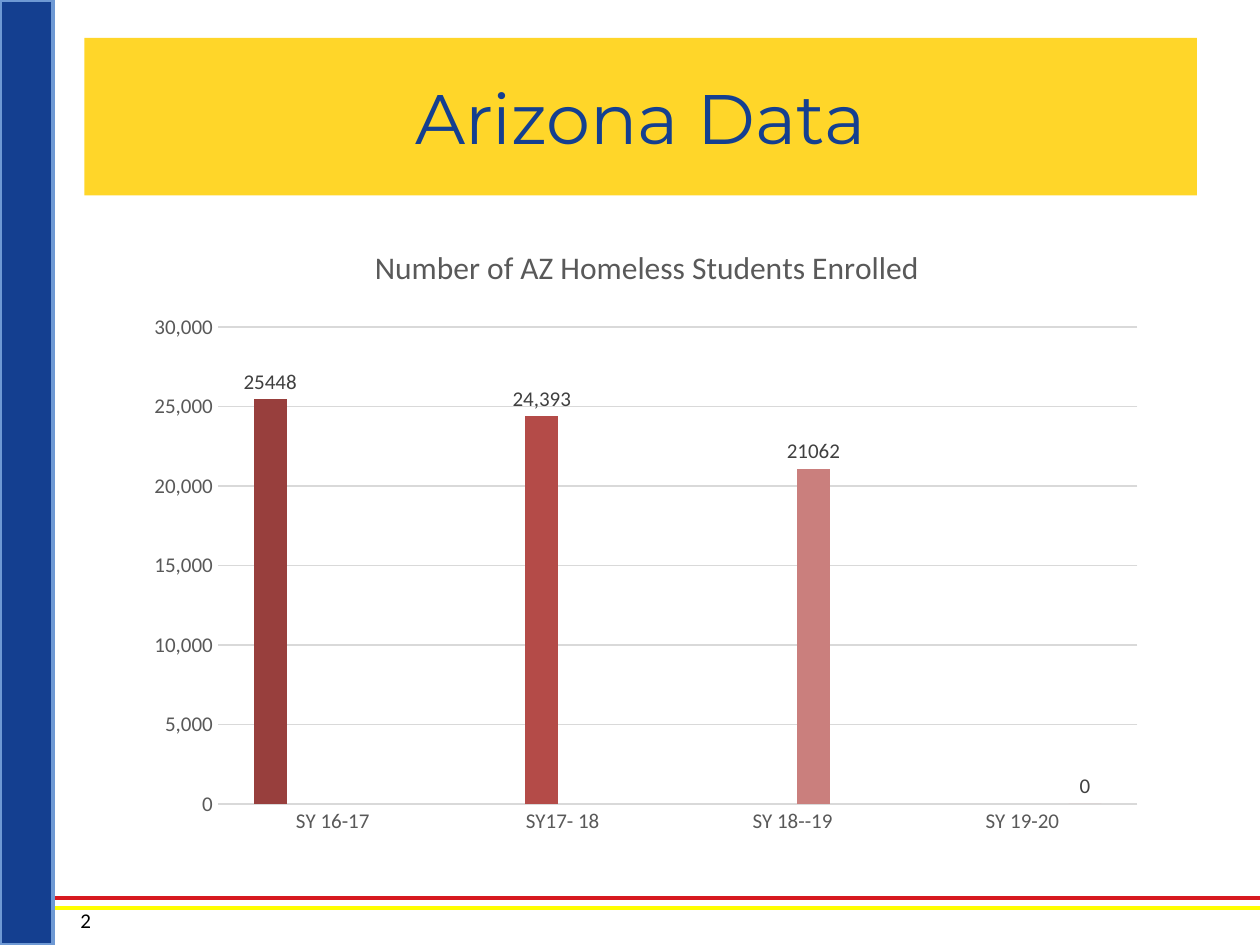
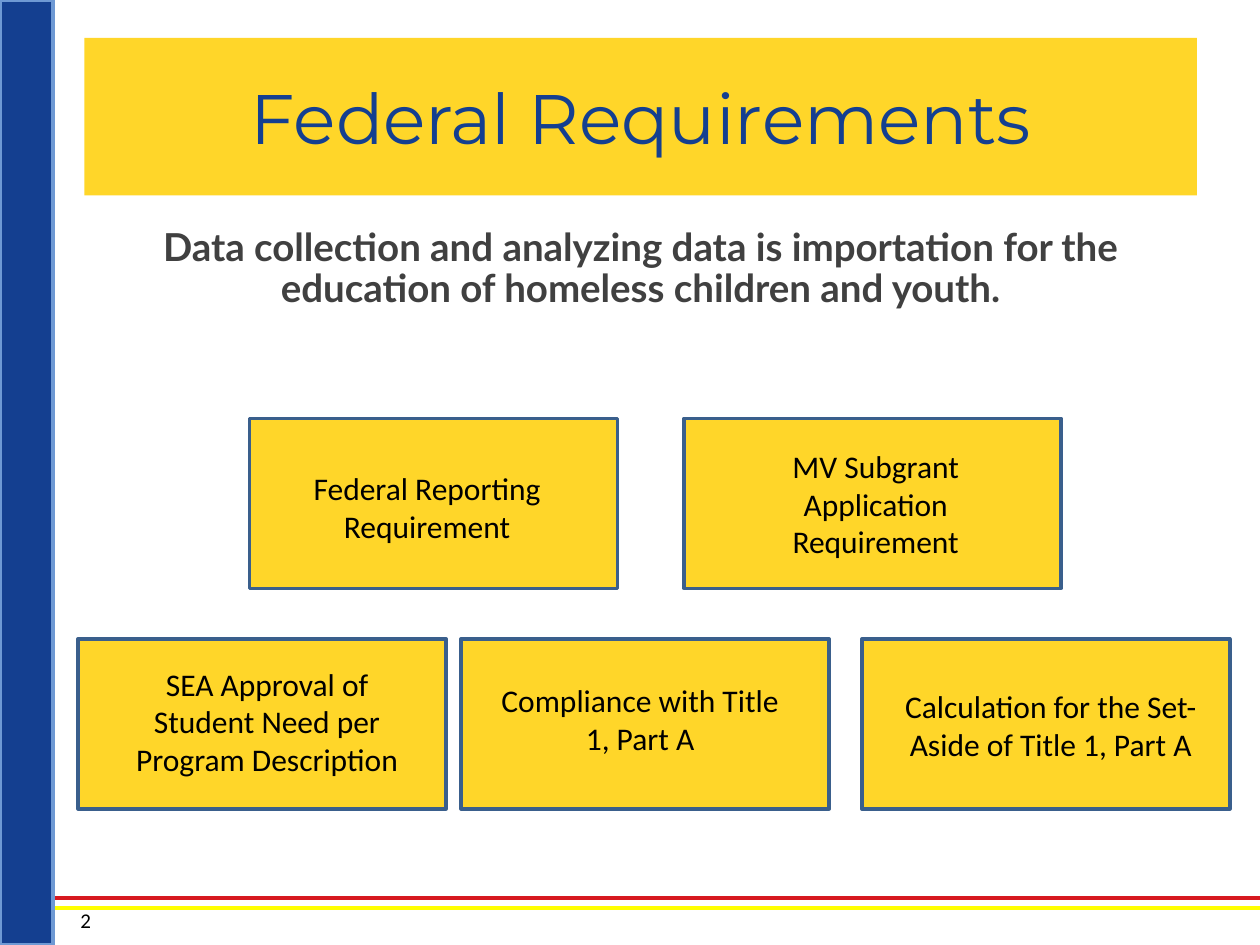
from lxml import etree
from pptx import Presentation
from pptx.chart.data import CategoryChartData
from pptx.dml.color import RGBColor
from pptx.enum.chart import XL_CHART_TYPE, XL_LABEL_POSITION, XL_TICK_MARK
from pptx.enum.shapes import MSO_CONNECTOR, MSO_SHAPE
from pptx.enum.text import MSO_ANCHOR, MSO_AUTO_SIZE, PP_ALIGN
from pptx.oxml import parse_xml
from pptx.oxml.ns import nsdecls, qn
from pptx.util import Inches, Pt

BLUE = RGBColor(0x14, 0x3F, 0x90)
BAND_EDGE = RGBColor(0x6E, 0x99, 0xD4)
BOX_EDGE = RGBColor(0x3A, 0x5F, 0x8C)
GOLD = RGBColor(0xFF, 0xD6, 0x29)
RED = RGBColor(0xD7, 0x19, 0x20)
YELLOW = RGBColor(0xFF, 0xFF, 0x00)
BLACK = RGBColor(0x00, 0x00, 0x00)
DARK = RGBColor(0x40, 0x40, 0x40)
GREY = RGBColor(0x59, 0x59, 0x59)
GRID = RGBColor(0xD9, 0xD9, 0xD9)

LEFT, CONTENT_W = Inches(0.67), Inches(8.83)

prs = Presentation()
prs.slide_width, prs.slide_height = Inches(10), Inches(7.5)


def add_rect(slide, x, y, w, h, fill, edge):
    sp = slide.shapes.add_shape(MSO_SHAPE.RECTANGLE, Inches(x), Inches(y), Inches(w), Inches(h))
    sp.shadow.inherit = False
    sp.fill.solid()
    sp.fill.fore_color.rgb = fill
    sp.line.color.rgb = edge
    sp.line.width = Pt(2)


def add_text(slide, x, y, w, h, text, size, align, anchor):
    tf = slide.shapes.add_textbox(Inches(x), Inches(y), Inches(w), Inches(h)).text_frame
    tf.word_wrap = True
    tf.auto_size = MSO_AUTO_SIZE.SHAPE_TO_FIT_TEXT
    tf.vertical_anchor = anchor
    tf.text = text
    p = tf.paragraphs[0]
    p.alignment = align
    font = p.runs[0].font
    font.size, font.name, font.color.rgb = Pt(size), "Calibri", BLACK


# Shared frame: footer rules, side band, title bar, page number
slides = []
for title, layout in (("Arizona Data", 5), ("Federal Requirements", 1)):
    slide = prs.slides.add_slide(prs.slide_layouts[layout])
    for x, y, color in ((0, 7.13, RED), (0.01, 7.21, YELLOW)):
        rule = slide.shapes.add_connector(
            MSO_CONNECTOR.STRAIGHT, Inches(x), Inches(y), Inches(x + 10), Inches(y))
        rule.line.color.rgb = color
        rule.line.width = Pt(2.25)
        etree.SubElement(rule._element.spPr, qn("a:effectLst"))
    add_rect(slide, 0, 0, 0.42, 7.5, BLUE, BAND_EDGE)

    sp = slide.shapes.title
    sp.left, sp.top, sp.width, sp.height = LEFT, Inches(0.3), CONTENT_W, Inches(1.25)
    sp.fill.solid()
    sp.fill.fore_color.rgb = GOLD
    tf = sp.text_frame
    tf.text = title
    tf.vertical_anchor = MSO_ANCHOR.MIDDLE
    p = tf.paragraphs[0]
    p.alignment = PP_ALIGN.CENTER
    font = p.runs[0].font
    font.size, font.name, font.color.rgb = Pt(40), "Montserrat", BLUE

    add_text(slide, 0.54, 7.15, 0.27, 0.3, "2", 12, PP_ALIGN.LEFT, MSO_ANCHOR.TOP)
    slides.append(slide)
data_slide, req_slide = slides

# Slide 1: enrolment chart, one series per school year
enrolment = [
    ("SY 16-17", 25448, RGBColor(0x98, 0x3F, 0x3D), "General"),
    ("SY17- 18", 24393, RGBColor(0xB4, 0x4B, 0x48), "#,##0"),
    ("SY 18--19", 21062, RGBColor(0xCA, 0x7F, 0x7D), "General"),
    ("SY 19-20", 0, RGBColor(0xDD, 0xB6, 0xB5), "General"),
]
data = CategoryChartData()
data.categories = [year for year, *_ in enrolment]
for i, (_, count, _, fmt) in enumerate(enrolment):
    values = [count if j == i else None for j in range(len(enrolment))]
    data.add_series(f"Series {i + 1}", values, number_format=fmt)
chart = data_slide.shapes.add_chart(
    XL_CHART_TYPE.COLUMN_CLUSTERED, Inches(1.08), Inches(1.75),
    Inches(8.11), Inches(4.98), data).chart
chart.has_legend = False
chart.font.size, chart.font.name = Pt(10), "Calibri"

chart.has_title = True
tf = chart.chart_title.text_frame
tf.text = "Number of AZ Homeless Students Enrolled"
font = tf.paragraphs[0].runs[0].font
font.size, font.name, font.bold, font.color.rgb = Pt(18), "Calibri", False, GREY
chart.chart_title.include_in_layout = False

plot = chart.plots[0]
plot.gap_width, plot.overlap, plot.vary_by_categories = 219, -27, False
for series, (_, _, color, fmt) in zip(plot.series, enrolment):
    series.format.fill.solid()
    series.format.fill.fore_color.rgb = color
    labels = series.data_labels
    labels.show_value = True
    labels.position = XL_LABEL_POSITION.OUTSIDE_END
    labels.number_format, labels.number_format_is_linked = fmt, False
    font = labels.font
    font.size, font.name, font.color.rgb = Pt(12), "Calibri", DARK

cat_axis, val_axis = chart.category_axis, chart.value_axis
for axis in (cat_axis, val_axis):
    axis.major_tick_mark = axis.minor_tick_mark = XL_TICK_MARK.NONE
    font = axis.tick_labels.font
    font.size, font.name, font.color.rgb = Pt(12), "Calibri", GREY
val_axis.minimum_scale, val_axis.maximum_scale, val_axis.major_unit = 0, 30000, 5000
val_axis.tick_labels.number_format = "#,##0"
val_axis.tick_labels.number_format_is_linked = False
val_axis.format.line.fill.background()
for line in (cat_axis.format.line, val_axis.major_gridlines.format.line):
    line.color.rgb = GRID
    line.width = Pt(0.75)

# Fixed place of the plot area, as shares of the chart
plot_area = chart._chartSpace.chart.plotArea
for old in plot_area.findall(qn("c:layout")):
    plot_area.remove(old)
plot_area.insert(0, parse_xml(
    f'<c:layout {nsdecls("c")}><c:manualLayout><c:layoutTarget val="inner"/>'
    '<c:xMode val="edge"/><c:yMode val="edge"/><c:x val="0.08"/><c:y val="0.17"/>'
    '<c:w val="0.9"/><c:h val="0.76"/></c:manualLayout></c:layout>'))

# Slide 2: lead sentence
body = req_slide.placeholders[1]
body.left, body.top, body.width, body.height = LEFT, Inches(1.76), CONTENT_W, Inches(4.95)
tf = body.text_frame
tf.auto_size = MSO_AUTO_SIZE.NONE
tf.text = ("Data collection and analyzing data is importation for the "
           "education of homeless children and youth.")
p = tf.paragraphs[0]
pPr = p._p.get_or_add_pPr()
pPr.set("marL", "0")
pPr.set("indent", "0")
etree.SubElement(pPr, qn("a:buNone"))
p.alignment, p.line_spacing, p.space_before = PP_ALIGN.CENTER, 0.9, Pt(0)
font = p.runs[0].font
font.size, font.name, font.bold, font.color.rgb = Pt(22), "Lato", True, DARK

# Slide 2: requirement boxes, two above three
ROW_1, ROW_2, BOX_H, LABEL_W = 3.32, 5.07, 1.35, 2.62
TWO_LINES, THREE_LINES = 0.71, 1.01
boxes = [  # box left, top, width; label left, top, height; text
    (1.98, ROW_1, 2.92, 2.08, 3.67, TWO_LINES, "Federal Reporting Requirement"),
    (5.43, ROW_1, 2.99, 5.64, 3.49, THREE_LINES, "MV Subgrant Application Requirement"),
    (0.62, ROW_2, 2.92, 0.81, 5.22, THREE_LINES,
     "SEA Approval of Student Need per Program Description"),
    (3.66, ROW_2, 2.92, 3.77, 5.35, TWO_LINES, "Compliance with Title 1, Part A"),
    (6.84, ROW_2, 2.92, 7.03, 5.4, TWO_LINES,
     "Calculation for the Set-Aside of Title 1, Part A"),
]
for x, y, w, label_x, label_y, label_h, text in boxes:
    add_rect(req_slide, x, y, w, BOX_H, GOLD, BOX_EDGE)
    add_text(req_slide, label_x, label_y, LABEL_W, label_h, text, 18,
             PP_ALIGN.CENTER, MSO_ANCHOR.MIDDLE)

prs.save("out.pptx")
